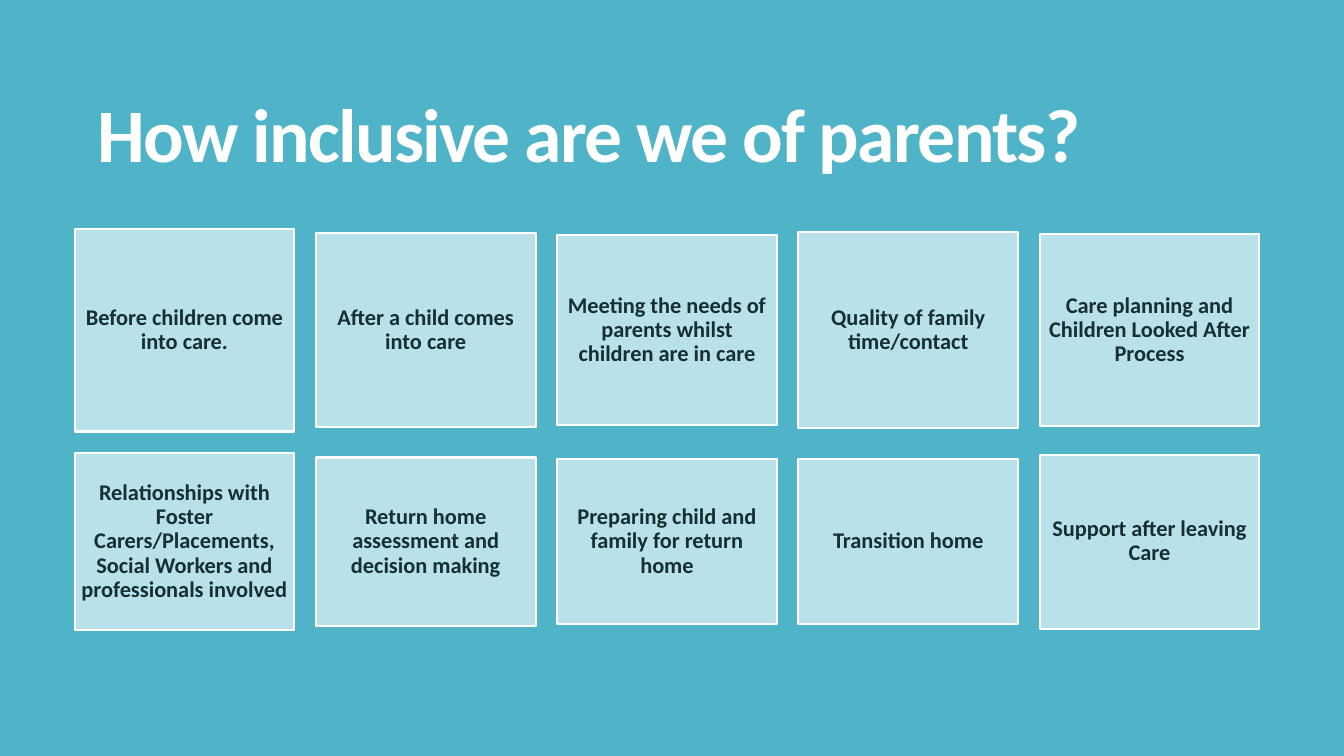
from dataclasses import dataclass

from pptx import Presentation
from pptx.dml.color import RGBColor as Rgb
from pptx.enum.shapes import MSO_SHAPE as Kind
from pptx.enum.text import MSO_ANCHOR as Anchor, MSO_AUTO_SIZE as Fit, PP_ALIGN as Align
from pptx.slide import Slide
from pptx.util import Cm, Pt

HUES = {"back": "50B4C8", "card": "B9E1E9", "text": "162F33", "white": "FFFFFF"}
LEFT, WIDTH, PITCH = 1.88, 5.54, 6.08
MIDS = (8.32, 13.65)
FRAME = {"vertical_anchor": Anchor.MIDDLE, "word_wrap": True, "auto_size": Fit.NONE}
INSETS = ("margin_left", "margin_right", "margin_top", "margin_bottom")


@dataclass
class Card:
    text: str
    height: float


ROWS = (
    (
        Card("Before children come into care.", 5.11),
        Card("After a child comes into care", 4.88),
        Card("Meeting the needs of parents whilst children are in care", 4.8),
        Card("Quality of family time/contact", 4.93),
        Card("Care planning and Children Looked After Process", 4.83),
    ),
    (
        Card("Relationships with Foster Carers/Placements, Social Workers "
             "and professionals involved", 4.45),
        Card("Return home assessment and decision making", 4.24),
        Card("Preparing child and family for return home", 4.17),
        Card("Transition home", 4.17),
        Card("Support after leaving Care", 4.39),
    ),
)


def tint(name: str) -> Rgb:
    return Rgb.from_string(HUES[name])


def apply(target: object, values: dict) -> None:
    for key, value in values.items():
        setattr(target, key, value)


def write(shape, text: str, size: int, hue: str, frame: dict, para: dict) -> None:
    body = shape.text_frame
    apply(body, FRAME | frame)
    line = body.paragraphs[0]
    apply(line, para)
    run = line.add_run()
    run.text = text
    apply(run.font, {"name": "Calibri", "size": Pt(size), "bold": True})
    run.font.color.rgb = tint(hue)


def head(slide: Slide) -> None:
    title = slide.shapes.title
    apply(title, {"left": Cm(1.83), "top": Cm(1.22), "width": Cm(29.92), "height": Cm(4.6)})
    write(title, "How inclusive are we of parents?", 54, "white",
          {"margin_left": Cm(0.63)}, {"alignment": Align.LEFT, "line_spacing": 0.85})
    title.text_frame.paragraphs[0].runs[0]._r.get_or_add_rPr().set("spc", "-120")


def draw(slide: Slide, card: Card, col: int, mid: float) -> None:
    box = slide.shapes.add_shape(
        Kind.RECTANGLE, Cm(LEFT + col * PITCH), Cm(mid - card.height / 2),
        Cm(WIDTH), Cm(card.height))
    box.shadow.inherit = False
    box.fill.solid()
    box.fill.fore_color.rgb = tint("card")
    box.line.color.rgb = tint("white")
    box.line.width = Pt(1.5)
    write(box, card.text, 16, "text", dict.fromkeys(INSETS, Cm(0.17)),
          {"alignment": Align.CENTER, "line_spacing": 0.9})


def main() -> None:
    deck = Presentation()
    apply(deck, {"slide_width": Cm(33.87), "slide_height": Cm(19.05)})
    slide = deck.slides.add_slide(deck.slide_layouts[5])
    fill = slide.background.fill
    fill.solid()
    fill.fore_color.rgb = tint("back")
    head(slide)
    for mid, row in zip(MIDS, ROWS):
        for col, card in enumerate(row):
            draw(slide, card, col, mid)
    deck.save("out.pptx")


if __name__ == "__main__":
    main()
